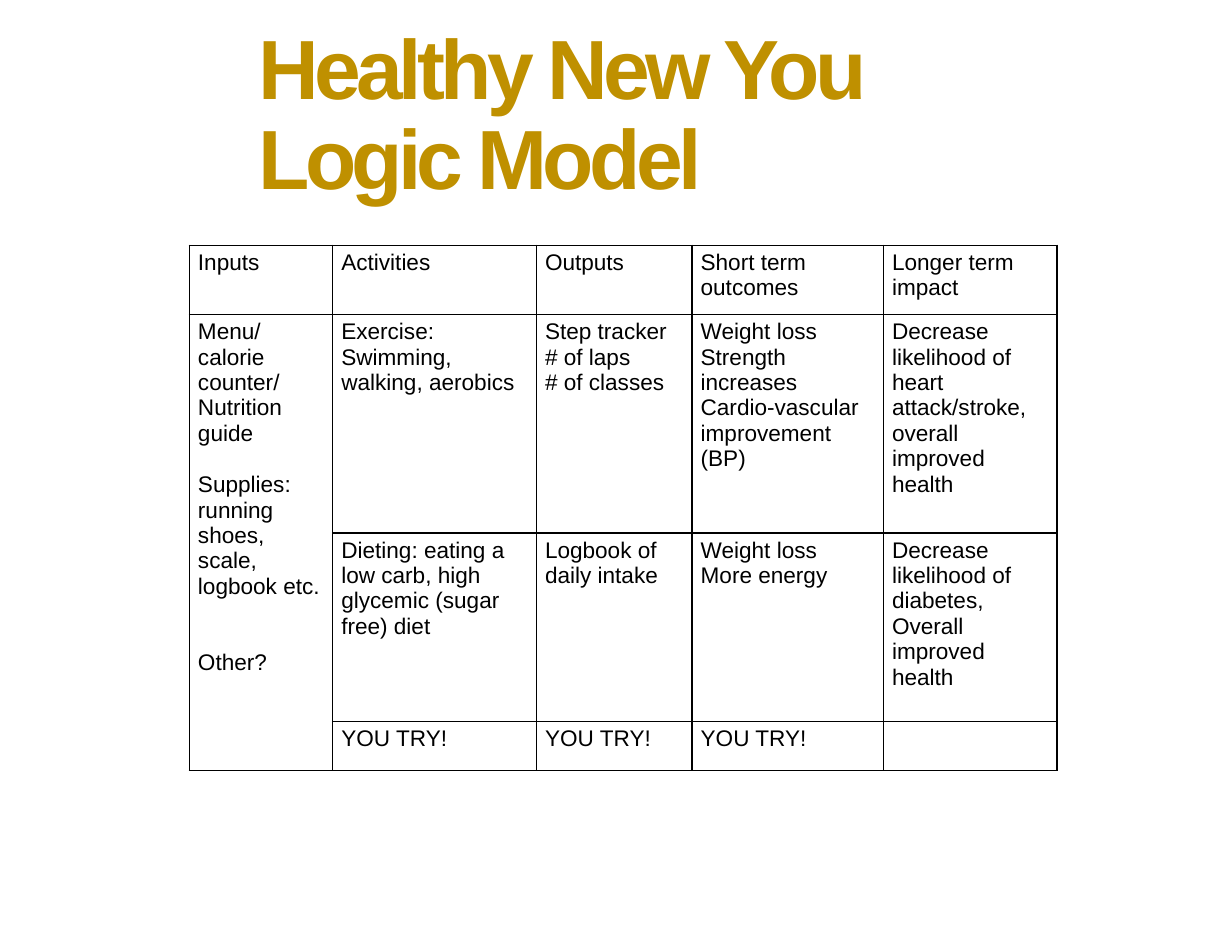
from lxml.etree import SubElement
from pptx import Presentation
from pptx.dml.color import RGBColor
from pptx.enum.text import MSO_ANCHOR, MSO_AUTO_SIZE, PP_ALIGN
from pptx.oxml.ns import qn
from pptx.util import Cm, Pt

THEME = {
    "font": "Arial",
    "gold": RGBColor(0xBF, 0x90, 0x00),
    "ink": RGBColor(0, 0, 0),
    "title_size": Pt(54),
    "cell_size": Pt(14.5),
    "line_width": Pt(1),
}
MARGINS = {
    "margin_left": Cm(0.2), "margin_right": Cm(0.2),
    "margin_top": Cm(0.1), "margin_bottom": Cm(0.1),
}


def apply_format(target, values):
    for name, value in values.items():
        setattr(target, name, value)


def draw_borders(cell):
    properties = cell._tc.get_or_add_tcPr()
    for side in ("lnL", "lnR", "lnT", "lnB"):
        line = SubElement(properties, qn(f"a:{side}"), w=str(THEME["line_width"]))
        fill = SubElement(line, qn("a:solidFill"))
        SubElement(fill, qn("a:srgbClr"), val=str(THEME["ink"]))


deck = Presentation()
apply_format(deck, {"slide_width": Cm(27.94), "slide_height": Cm(21.59)})
page = deck.slides.add_slide(deck.slide_layouts[5])

# Title
title = page.shapes.title
apply_format(title, {"left": Cm(5.66), "top": Cm(1.35),
                     "width": Cm(16.59), "height": Cm(2.62)})
apply_format(title.text_frame, {
    **MARGINS, "word_wrap": True, "auto_size": MSO_AUTO_SIZE.NONE,
    "vertical_anchor": MSO_ANCHOR.MIDDLE})
para = title.text_frame.paragraphs[0]
apply_format(para, {"alignment": PP_ALIGN.LEFT, "line_spacing": 0.9})
span = para.add_run()
span.text = "Healthy New You Logic Model"
apply_format(span.font, {"name": THEME["font"], "size": THEME["title_size"], "bold": True})
span.font.color.rgb = THEME["gold"]
span._r.get_or_add_rPr().set("spc", "-300")

# Logic model: each cell is a list of paragraphs
column_widths = [3.25, 4.62, 3.53, 4.34, 3.94]
row_heights = [1.58, 4.95, 4.27, 1.12]
rows = [
    [["Inputs"], ["Activities"], ["Outputs"], ["Short term outcomes"],
     ["Longer term impact"]],
    [["Menu/ calorie counter/", "Nutrition guide",
      "Supplies: running shoes, scale, logbook etc.", "Other?"],
     ["Exercise: Swimming, walking, aerobics"],
     ["Step tracker", "# of laps", "# of classes"],
     ["Weight loss", "Strength increases", "Cardio-vascular improvement (BP)"],
     ["Decrease likelihood of heart attack/stroke, overall improved health"]],
    [[], ["Dieting: eating a low carb, high glycemic (sugar free) diet"],
     ["Logbook of daily intake"], ["Weight loss", "More energy"],
     ["Decrease likelihood of diabetes,", "Overall improved health"]],
    [[], ["YOU TRY!"], ["YOU TRY!"], ["YOU TRY!"], []],
]
space_before = {"Supplies: running shoes, scale, logbook etc.": Pt(16.6),
                "Other?": Pt(32.5)}

table = page.shapes.add_table(
    len(rows), len(column_widths), Cm(4.29), Cm(5.56),
    Cm(sum(column_widths)), Cm(sum(row_heights))).table
apply_format(table, {"first_row": False, "horz_banding": False})
for column, width in zip(table.columns, column_widths):
    column.width = Cm(width)
for row, height in zip(table.rows, row_heights):
    row.height = Cm(height)

for row_index, row in enumerate(rows):
    for column_index, lines in enumerate(row):
        cell = table.cell(row_index, column_index)
        apply_format(cell, {**MARGINS, "vertical_anchor": MSO_ANCHOR.TOP})
        draw_borders(cell)
        cell.fill.background()
        cell.text_frame.text = "\n".join(lines)
        for para in cell.text_frame.paragraphs:
            if para.text in space_before:
                para.space_before = space_before[para.text]
            for span in para.runs:
                apply_format(span.font, {"name": THEME["font"], "size": THEME["cell_size"]})
                span.font.color.rgb = THEME["ink"]

# Inputs serve every activity
table.cell(1, 0).merge(table.cell(3, 0))

deck.save("out.pptx")
